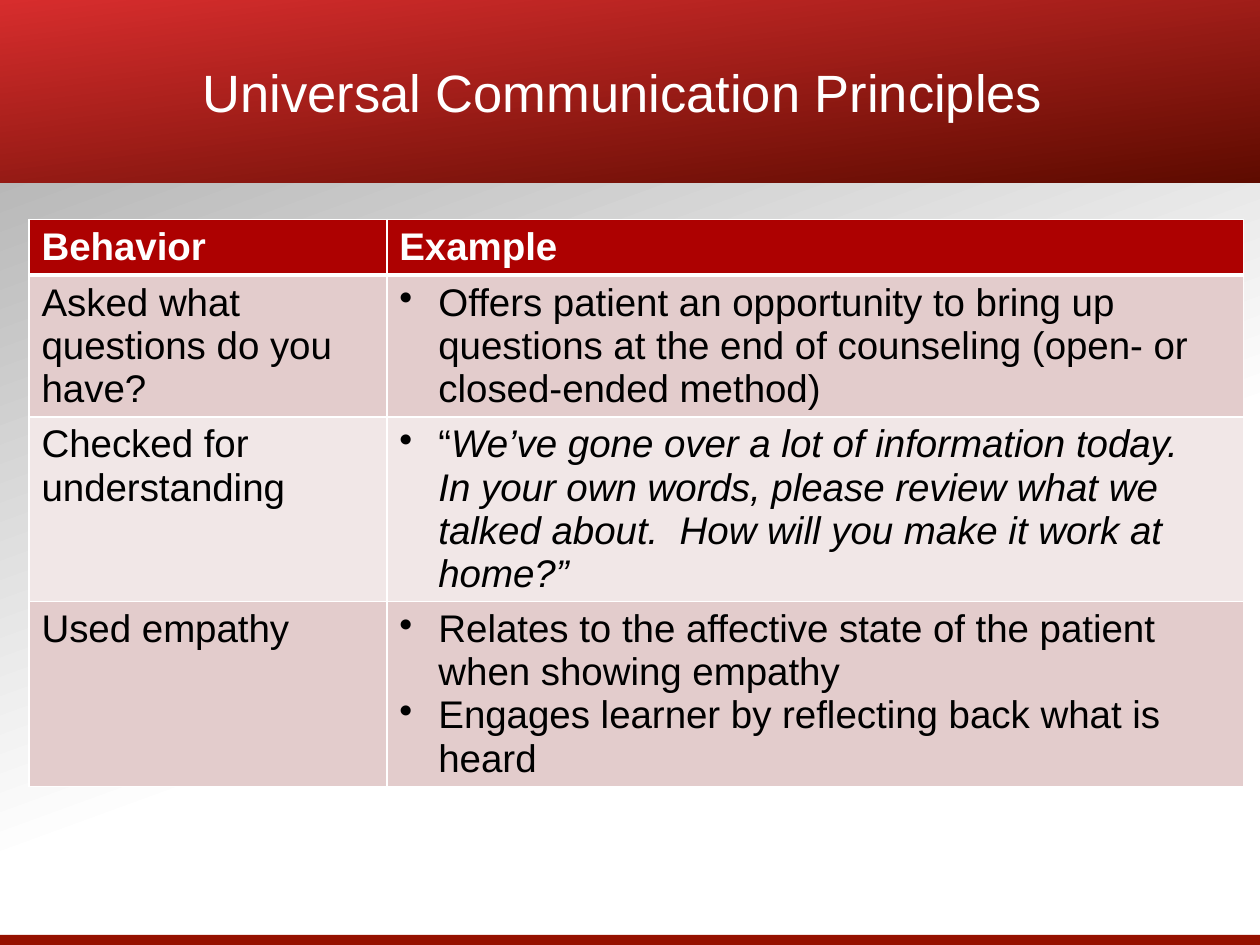
import pptx
import pptx.dml.color
import pptx.enum.shapes
import pptx.enum.text
import pptx.oxml.ns
import pptx.util
import lxml.etree

RGB = pptx.dml.color.RGBColor
WHITE = RGB(0xFF, 0xFF, 0xFF)
BLACK = RGB(0x00, 0x00, 0x00)
GREY = RGB(0xA6, 0xA6, 0xA6)
BRIGHT_RED = RGB(0xD7, 0x2D, 0x2D)
DARK_RED = RGB(0x5E, 0x0B, 0x00)
STRIP_RED = RGB(0x95, 0x11, 0x00)
HEADER_RED = RGB(0xAD, 0x01, 0x01)
ROSE = RGB(0xE3, 0xCC, 0xCC)
PALE_ROSE = RGB(0xF1, 0xE7, 0xE7)
Inches = pptx.util.Inches
Pt = pptx.util.Pt
qn = pptx.oxml.ns.qn


def apply_gradient(fill, start, end, clockwise, end_position):
    fill.gradient()
    fill.gradient_angle = 360 - clockwise
    first, last = fill.gradient_stops
    first.color.rgb, first.position = start, 0
    last.color.rgb, last.position = end, end_position


def add_border(cell_properties, side, width):
    line = lxml.etree.SubElement(cell_properties, qn("a:" + side), w=str(Pt(width)))
    solid = lxml.etree.SubElement(line, qn("a:solidFill"))
    lxml.etree.SubElement(solid, qn("a:srgbClr"), val=str(WHITE))


deck = pptx.Presentation()
deck.slide_width, deck.slide_height = Inches(10), Inches(7.5)
slide = deck.slides.add_slide(deck.slide_layouts[5])
apply_gradient(slide.background.fill, GREY, WHITE, 70, 0.62)

strip = slide.shapes.add_shape(
    pptx.enum.shapes.MSO_SHAPE.RECTANGLE, 0, Inches(7.42), deck.slide_width, Inches(0.08)
)
strip.shadow.inherit = False
strip.fill.solid()
strip.fill.fore_color.rgb = STRIP_RED
strip.line.fill.background()

banner = slide.shapes.title
banner.left, banner.top = 0, 0
banner.width, banner.height = deck.slide_width, Inches(1.45)
apply_gradient(banner.fill, BRIGHT_RED, DARK_RED, 83, 1)
banner.text_frame.text = "Universal Communication Principles "
banner.text_frame.vertical_anchor = pptx.enum.text.MSO_ANCHOR.MIDDLE
heading = banner.text_frame.paragraphs[0]
heading.alignment = pptx.enum.text.PP_ALIGN.CENTER
heading.font.name, heading.font.size = "Arial", Pt(30)
heading.font.color.rgb = WHITE

QUOTE = (
    "We’ve gone over a lot of information today.  In your own words, "
    "please review what we talked about.  How will you make it work at home?”"
)
principles = [
    ("Behavior", [[("Example", False)]], 1),
    ("Asked what questions do you have?", [[(
        "Offers patient an opportunity to bring up questions at the end of "
        "counseling (open- or closed-ended method)", False)]], 3),
    ("Checked for understanding", [[("“", False), (QUOTE, True)]], 4),
    ("Used empathy", [
        [("Relates to the affective state of the patient when showing empathy", False)],
        [("Engages learner by reflecting back what is heard", False)],
    ], 4),
]
row_heights = [Inches(0.1 + 0.34 * lines) for _, _, lines in principles]
grid = slide.shapes.add_table(
    len(principles), 2, Inches(0.23), Inches(1.74), Inches(9.64), sum(row_heights)
).table
grid.columns[0].width, grid.columns[1].width = Inches(2.84), Inches(6.8)

for row, (behavior, examples, _) in enumerate(principles):
    grid.rows[row].height = row_heights[row]
    is_header = row == 0
    for column, paragraphs in enumerate(([[(behavior, False)]], examples)):
        cell = grid.cell(row, column)
        for index, runs in enumerate(paragraphs):
            frame = cell.text_frame
            paragraph = frame.add_paragraph() if index else frame.paragraphs[0]
            paragraph.font.name, paragraph.font.size = "Arial", Pt(22)
            paragraph.font.bold = is_header
            paragraph.font.color.rgb = WHITE if is_header else BLACK
            for wording, italic in runs:
                run = paragraph.add_run()
                run.text = wording
                if italic:
                    run.font.italic = True
            if column == 1 and not is_header:
                properties = paragraph._p.get_or_add_pPr()
                properties.set("marL", str(Inches(0.31)))
                properties.set("indent", str(-Inches(0.31)))
                bullet = lxml.etree.Element(qn("a:buChar"), char="•")
                properties.insert(0, bullet)
        cell_properties = cell._tc.get_or_add_tcPr()
        for side in ("lnL", "lnR", "lnT", "lnB"):
            thick = (is_header and side == "lnB") or (row == 1 and side == "lnT")
            add_border(cell_properties, side, 3 if thick else 1)
        cell.fill.solid()
        cell.fill.fore_color.rgb = HEADER_RED if is_header else ROSE if row % 2 else PALE_ROSE

deck.save("out.pptx")
